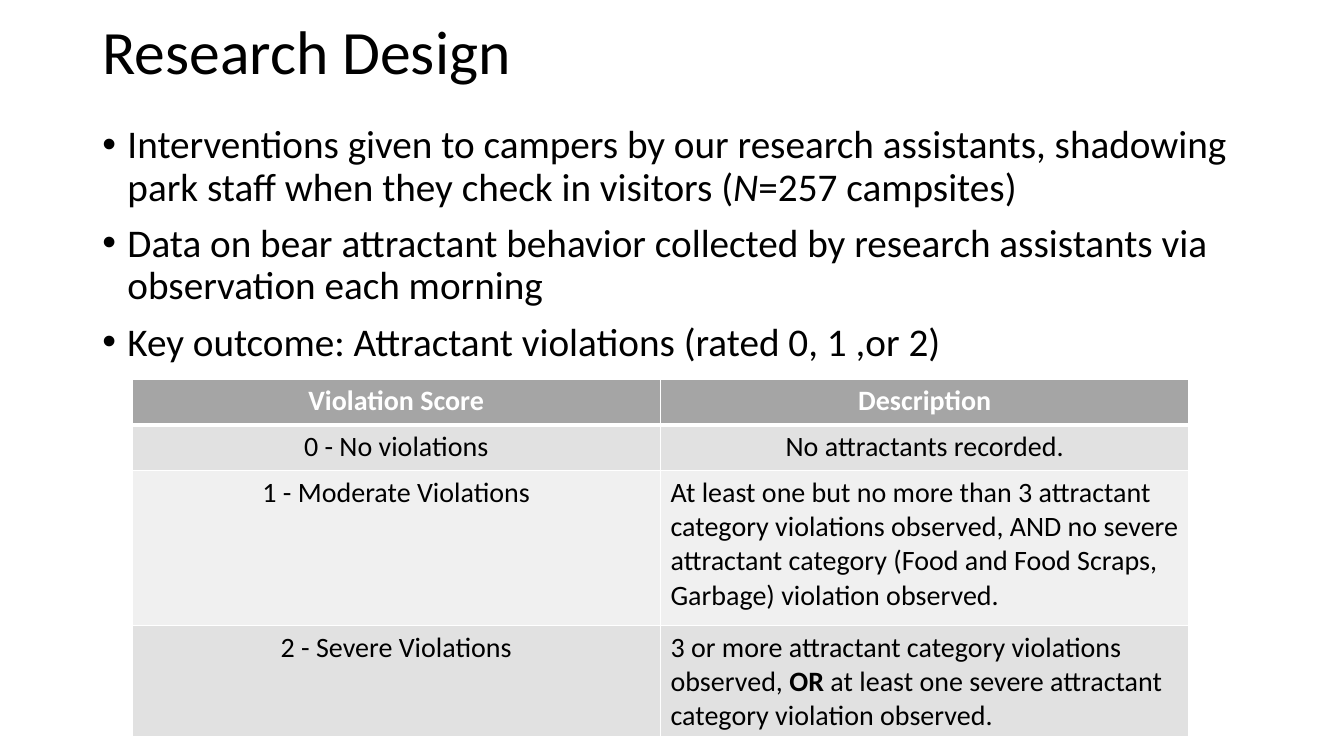
import pptx
import pptx.util
import pptx.dml.color
import pptx.enum.text
import pptx.oxml.ns
import lxml.etree

Pt = pptx.util.Pt
ALIGN = pptx.enum.text.PP_ALIGN
ANCHOR = pptx.enum.text.MSO_ANCHOR
COLORS = {"text": "000000", "white": "FFFFFF", "header": "A5A5A5",
          "band": "E1E1E1", "light": "F0F0F0"}


def add_xml(parent, tag, **attrs):
    return lxml.etree.SubElement(parent, pptx.oxml.ns.qn(tag), attrs)


class SlideBuilder:
    font = "Calibri"

    def __init__(self, prs):
        self.s = prs.slides.add_slide(prs.slide_layouts[5])

    def color(self, name):
        return pptx.dml.color.RGBColor.from_string(COLORS[name])

    def add_runs(self, p, runs, size, color="text", align=ALIGN.LEFT):
        p.alignment = align
        for text, style in runs:
            r = p.add_run()
            r.text = text
            r.font.name = self.font
            r.font.size = Pt(size)
            r.font.color.rgb = self.color(color)
            r.font.bold = style == "bold"
            r.font.italic = style == "italic"

    def title(self, text, x, y, w, h):
        sp = self.s.shapes.title
        sp.left, sp.top, sp.width, sp.height = Pt(x), Pt(y), Pt(w), Pt(h)
        tf = sp.text_frame
        tf.auto_size = pptx.enum.text.MSO_AUTO_SIZE.NONE
        tf.vertical_anchor = ANCHOR.MIDDLE
        p = tf.paragraphs[0]
        p.line_spacing = 0.9
        self.add_runs(p, [(text, "")], 44)

    def bullets(self, items, x, y, w, h):
        sp = self.s.shapes.add_textbox(Pt(x), Pt(y), Pt(w), Pt(h))
        tf = sp.text_frame
        tf.word_wrap = True
        for i, runs in enumerate(items):
            p = tf.add_paragraph() if i else tf.paragraphs[0]
            p.line_spacing = 0.9
            p.space_before = Pt(10)
            self.add_runs(p, runs, 28)
            pPr = p._p.get_or_add_pPr()
            pPr.set("marL", str(Pt(18)))
            pPr.set("indent", str(Pt(-18)))
            add_xml(pPr, "a:buFont", typeface="Arial")
            add_xml(pPr, "a:buChar", char="•")

    def borders(self, cell, widths):
        tcPr = cell._tc.get_or_add_tcPr()
        for side, width in zip("LRTB", widths):
            ln = add_xml(tcPr, f"a:ln{side}", w=str(Pt(width)))
            fill = add_xml(ln, "a:solidFill")
            add_xml(fill, "a:srgbClr", val=COLORS["white"])

    def table(self, rows, heights, x, y, w):
        shape = self.s.shapes.add_table(len(rows), len(rows[0]), Pt(x), Pt(y),
                                        Pt(w), Pt(sum(heights)))
        table = shape.table
        for i, row in enumerate(rows):
            table.rows[i].height = Pt(heights[i])
            header = i == 0
            fill = "header" if header else "band" if i % 2 else "light"
            for j, (runs, align) in enumerate(row):
                cell = table.cell(i, j)
                top = 3 if i == 1 else 1
                self.borders(cell, (1, 1, top, 3 if header else 1))
                cell.fill.solid()
                cell.fill.fore_color.rgb = self.color(fill)
                self.add_runs(cell.text_frame.paragraphs[0], runs, 20,
                              "white" if header else "text", align)


def main():
    prs = pptx.Presentation()
    prs.slide_width, prs.slide_height = Pt(960), Pt(540)
    slide = SlideBuilder(prs)
    slide.title("Research Design", 66, -13, 828, 104.4)
    slide.bullets([
        [("Interventions given to campers by our research assistants, "
          "shadowing park staff when they check in visitors (", ""),
         ("N", "italic"), ("=257 campsites)", "")],
        [("Data on bear attractant behavior collected by research assistants "
          "via observation each morning", "")],
        [("Key outcome: Attractant violations (rated 0, 1 ,or 2)", "")],
    ], 66, 85.7, 828, 439)
    center, left = ALIGN.CENTER, ALIGN.LEFT
    slide.table([
        [([("Violation Score", "bold")], center),
         ([("Description", "bold")], center)],
        [([("0 - No violations", "")], center),
         ([("No attractants recorded.", "")], center)],
        [([("1 - Moderate Violations", "")], center),
         ([("At least one but no more than 3 attractant category violations "
            "observed, AND no severe attractant category (Food and Food "
            "Scraps, Garbage) violation observed.", "")], left)],
        [([("2 - Severe Violations", "")], center),
         ([("3 or more attractant category violations observed, ", ""),
           ("OR", "bold"),
           (" at least one severe attractant category violation observed.",
            "")], left)],
    ], [32.7, 32.7, 110.8, 69], 94.3, 270.7, 755)
    prs.save("out.pptx")


if __name__ == "__main__":
    main()
